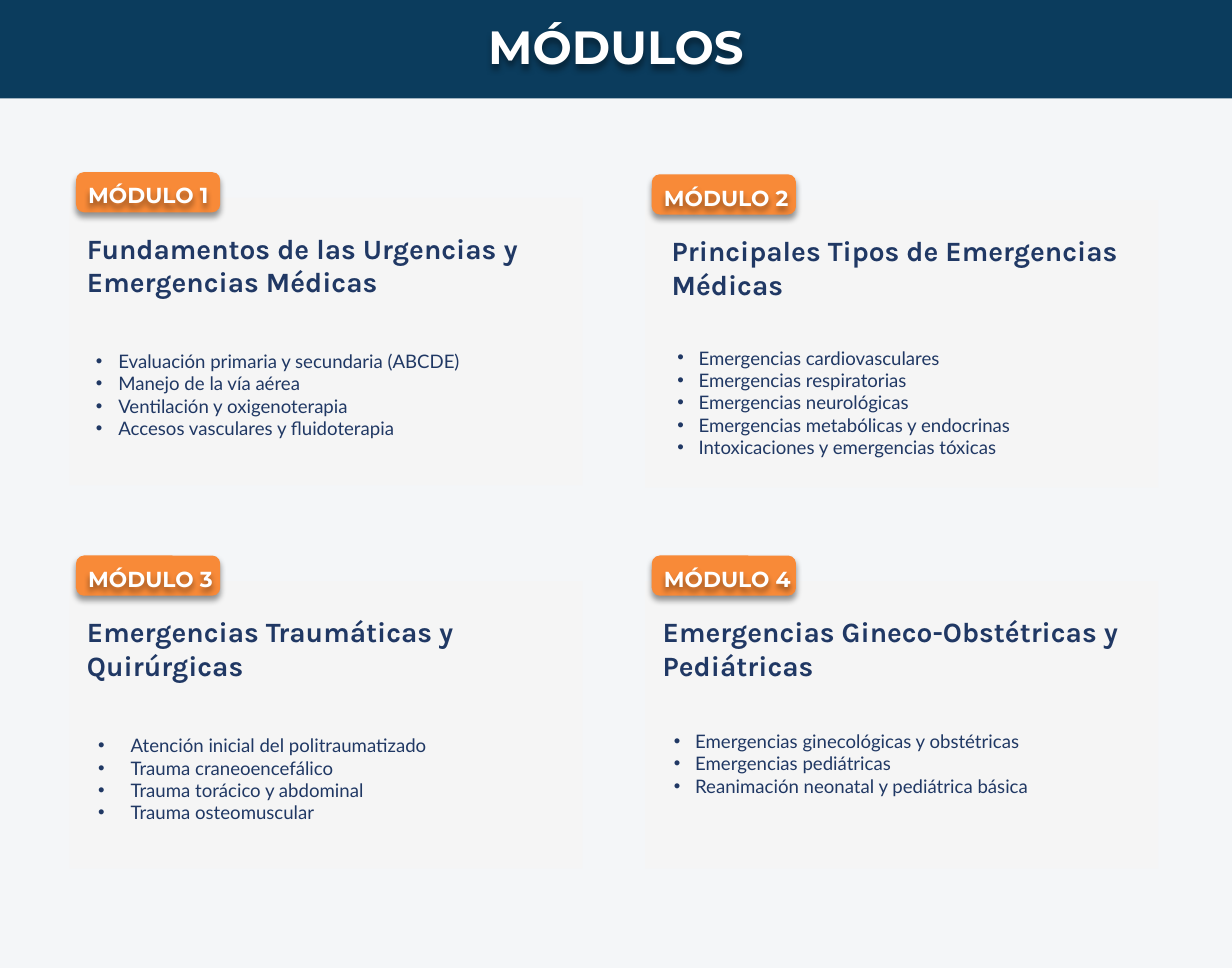
from dataclasses import dataclass

from lxml import etree
from pptx import Presentation
from pptx.dml.color import RGBColor
from pptx.enum.shapes import MSO_SHAPE
from pptx.enum.text import MSO_AUTO_SIZE, PP_ALIGN
from pptx.oxml.ns import qn
from pptx.util import Inches, Pt

RECTANGLE, ROUNDED = MSO_SHAPE.RECTANGLE, MSO_SHAPE.ROUNDED_RECTANGLE
LEFT, CENTER = PP_ALIGN.LEFT, PP_ALIGN.CENTER
FIT_SHAPE = MSO_AUTO_SIZE.SHAPE_TO_FIT_TEXT


@dataclass(frozen=True)
class TextStyle:
    font: str
    size: int
    color: str
    bold: bool = False


@dataclass(frozen=True)
class Theme:
    background: str = "F4F6F8"
    band: str = "0B3C5D"
    card: str = "F5F5F5"
    badge: str = "F88A38"
    shadow: str = "000000"
    title: TextStyle = TextStyle("Montserrat", 30, "FFFFFF", True)
    label: TextStyle = TextStyle("Montserrat", 14, "FFFFFF", True)
    heading: TextStyle = TextStyle("Karla", 18, "203864", True)
    topic: TextStyle = TextStyle("Lato", 12, "203864")


@dataclass(frozen=True)
class Module:
    """Heading and topic offsets are relative to the card's top left corner."""
    heading: str
    topics: tuple
    left: float
    top: float
    topics_dx: float
    topics_dy: float
    indent: float
    hanging: float
    heading_dx: float = 0.06


MODULES = (
    Module("Fundamentos de las Urgencias y Emergencias Médicas",
           ("Evaluación primaria y secundaria (ABCDE)", "Manejo de la vía aérea",
            "Ventilación y oxigenoterapia", "Accesos vasculares y fluidoterapia"),
           0.62, 1.77, 0.14, 1.31, 0.2, 0.2),
    Module("Principales Tipos de Emergencias Médicas",
           ("Emergencias cardiovasculares", "Emergencias respiratorias",
            "Emergencias neurológicas", "Emergencias metabólicas y endocrinas",
            "Intoxicaciones y emergencias tóxicas"),
           5.77, 1.79, 0.09, 1.26, 0.29, 0.19, heading_dx=0.14),
    Module("Emergencias Traumáticas y Quirúrgicas",
           ("Atención inicial del politraumatizado", "Trauma craneoencefálico",
            "Trauma torácico y abdominal", "Trauma osteomuscular"),
           0.62, 5.2, 0.16, 1.32, 0.29, 0.29),
    Module("Emergencias Gineco-Obstétricas y Pediátricas",
           ("Emergencias ginecológicas y obstétricas", "Emergencias pediátricas",
            "Reanimación neonatal y pediátrica básica"),
           5.77, 5.2, 0.16, 1.28, 0.19, 0.19),
)


class ModuleSlide:
    def __init__(self, slide, theme):
        self.slide, self.theme = slide, theme
        slide.background.fill.solid()
        slide.background.fill.fore_color.rgb = RGBColor.from_string(theme.background)

    def drop_shadow(self, shape):
        shape.shadow.inherit = False
        effects = shape._element.spPr.find(qn("a:effectLst"))
        outer = etree.SubElement(effects, qn("a:outerShdw"), blurRad=str(Pt(4)),
                                 dist=str(Pt(3)), dir="5400000", rotWithShape="0")
        color = etree.SubElement(outer, qn("a:srgbClr"), val=self.theme.shadow)
        etree.SubElement(color, qn("a:alpha"), val="40000")

    def block(self, shapes, kind, box, color):
        shape = shapes.add_shape(kind, *map(Inches, box))
        shape.shadow.inherit = False
        shape.fill.solid()
        shape.fill.fore_color.rgb = RGBColor.from_string(color)
        shape.line.fill.background()
        return shape

    def text(self, shapes, lines, box, style, align=LEFT, wrap=True):
        area = shapes.add_textbox(*map(Inches, box))
        frame = area.text_frame
        frame.text = "\n".join(lines)
        frame.word_wrap = wrap
        frame.auto_size = FIT_SHAPE
        for paragraph in frame.paragraphs:
            paragraph.alignment = align
            for run in paragraph.runs:
                run.font.name = style.font
                run.font.size = Pt(style.size)
                run.font.bold = style.bold
                run.font.color.rgb = RGBColor.from_string(style.color)
        return area

    def bullets(self, shapes, module, box):
        area = self.text(shapes, module.topics, box, self.theme.topic)
        for paragraph in area.text_frame.paragraphs:
            properties = paragraph._p.get_or_add_pPr()
            properties.set("marL", str(Inches(module.indent)))
            properties.set("indent", str(-Inches(module.hanging)))
            etree.SubElement(properties, qn("a:buFont"), typeface="Arial")
            etree.SubElement(properties, qn("a:buChar"), char="•")

    def header(self, title):
        shapes = self.slide.shapes
        self.block(shapes, RECTANGLE, (0, 0, 11.02, 0.88), self.theme.band)
        self.drop_shadow(self.text(shapes, [title], (2.88, 0.11, 5.26, 0.61),
                                   self.theme.title, CENTER))

    def module(self, number, module):
        shapes = self.slide.shapes.add_group_shape().shapes
        theme, left, top = self.theme, module.left, module.top
        self.block(shapes, RECTANGLE, (left, top, 4.59, 2.57), theme.card)
        badge = self.block(shapes, ROUNDED, (left + 0.06, top - 0.23, 1.29, 0.36), theme.badge)
        badge.adjustments[0] = 0.2
        self.drop_shadow(badge)
        label = self.text(shapes, [f"MÓDULO {number}"], (left + 0.07, top - 0.19, 1.38, 0.34),
                          theme.label, wrap=False)
        self.drop_shadow(label)
        heading_left = left + module.heading_dx
        self.text(shapes, [module.heading],
                  (heading_left, top + 0.25, left + 4.59 - heading_left, 0.71), theme.heading)
        topics_height = 0.1 + 0.2 * len(module.topics)
        self.bullets(shapes, module,
                     (left + module.topics_dx, top + module.topics_dy, 4.19, topics_height))


def main():
    presentation = Presentation()
    presentation.slide_width, presentation.slide_height = Inches(11.02), Inches(8.66)
    page = ModuleSlide(presentation.slides.add_slide(presentation.slide_layouts[6]), Theme())
    page.header("MÓDULOS")
    for number, module in enumerate(MODULES, 1):
        page.module(number, module)
    presentation.save("out.pptx")


if __name__ == "__main__":
    main()
